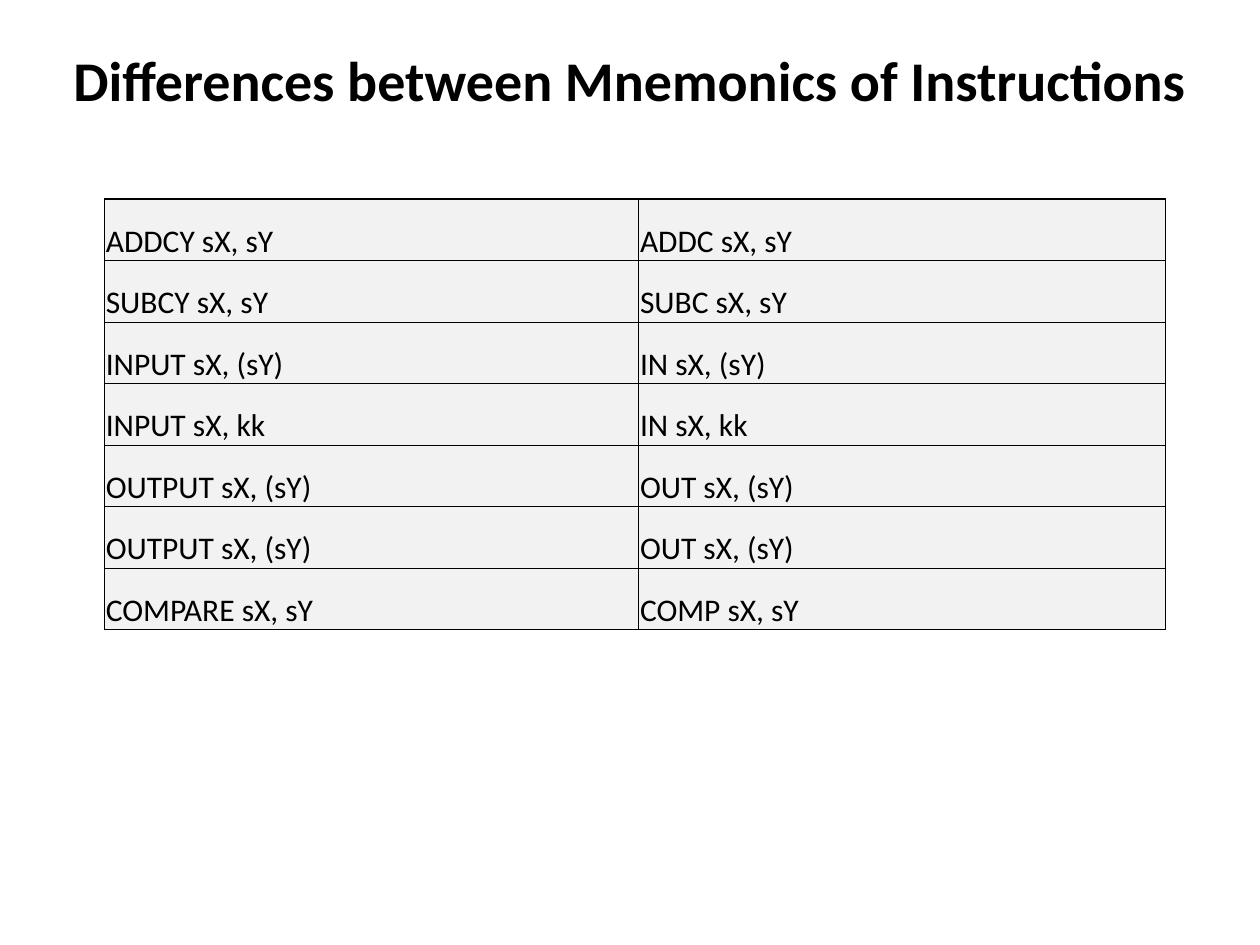
from lxml import etree
from pptx import Presentation
from pptx.dml.color import RGBColor
from pptx.enum.text import MSO_ANCHOR, PP_ALIGN
from pptx.oxml.ns import qn
from pptx.util import Inches, Pt

CENTER = PP_ALIGN.CENTER
LEFT = PP_ALIGN.LEFT
MIDDLE = MSO_ANCHOR.MIDDLE
BOTTOM = MSO_ANCHOR.BOTTOM
TITLE_ONLY = 5

COLORS = {"text": "000000", "border": "000000", "cell": "F2F2F2"}
THIN, THICK = 0.5, 1

INSTRUCTIONS = [
    ("ADDCY sX, sY", "ADDC sX, sY"),
    ("SUBCY sX, sY", "SUBC sX, sY"),
    ("INPUT sX, (sY)", "IN sX, (sY)"),
    ("INPUT sX, kk", "IN sX, kk"),
    ("OUTPUT sX, (sY)", "OUT sX, (sY)"),
    ("OUTPUT sX, (sY)", "OUT sX, (sY)"),
    ("COMPARE sX, sY", "COMP sX, sY"),
]


class SlideBuilder:
    """Holds the style and the current slide, and adds elements to it."""

    def __init__(self, slide, font="Calibri"):
        self.slide = slide
        self.font = font

    def format_paragraph(self, paragraph, size, alignment, bold=False):
        paragraph.alignment = alignment
        for run in paragraph.runs:
            run.font.name = self.font
            run.font.size = Pt(size)
            run.font.bold = bold
            run.font.color.rgb = RGBColor.from_string(COLORS["text"])

    def title(self, text, left, top, width, height):
        title = self.slide.shapes.title
        title.left, title.top = Inches(left), Inches(top)
        title.width, title.height = Inches(width), Inches(height)
        title.text_frame.text = text
        title.text_frame.word_wrap = True
        title.text_frame.vertical_anchor = MIDDLE
        self.format_paragraph(title.text_frame.paragraphs[0], 32, CENTER, bold=True)

    def border(self, cell, side, width):
        properties = cell._tc.get_or_add_tcPr()
        line = etree.SubElement(properties, qn(f"a:ln{side}"), w=str(Pt(width)))
        fill = etree.SubElement(line, qn("a:solidFill"))
        etree.SubElement(fill, qn("a:srgbClr"), val=COLORS["border"])

    def cell(self, cell, text, borders):
        for side, width in borders.items():
            self.border(cell, side, width)
        cell.fill.solid()
        cell.fill.fore_color.rgb = RGBColor.from_string(COLORS["cell"])
        cell.margin_left = cell.margin_right = cell.margin_top = Inches(0.01)
        cell.margin_bottom = 0
        cell.vertical_anchor = BOTTOM
        cell.text_frame.text = text
        paragraph = cell.text_frame.paragraphs[0]
        paragraph.space_before = Pt(9)
        self.format_paragraph(paragraph, 18, LEFT)

    def table(self, rows, left, top, column_widths, height):
        shape = self.slide.shapes.add_table(
            len(rows), len(column_widths), Inches(left), Inches(top),
            Inches(sum(column_widths)), Inches(height))
        table = shape.table
        table.first_row = table.horz_banding = False
        for column, width in zip(table.columns, column_widths):
            column.width = Inches(width)
        last_column = len(column_widths) - 1
        for row_index, texts in enumerate(rows):
            for column_index, text in enumerate(texts):
                borders = {
                    "L": THICK if column_index == 0 else THIN,
                    "R": THICK if column_index == last_column else THIN,
                    "T": THICK if row_index == 0 else THIN,
                    "B": THIN,
                }
                self.cell(table.cell(row_index, column_index), text, borders)


def main():
    presentation = Presentation()
    presentation.slide_width = Inches(10)
    presentation.slide_height = Inches(7.5)
    slide = presentation.slides.add_slide(presentation.slide_layouts[TITLE_ONLY])
    builder = SlideBuilder(slide)
    builder.title("Differences between Mnemonics of Instructions", 0, 0, 10, 1.25)
    builder.table(INSTRUCTIONS, 0.83, 1.58, (4.24, 4.18), 3.42)
    presentation.save("out.pptx")


if __name__ == "__main__":
    main()
